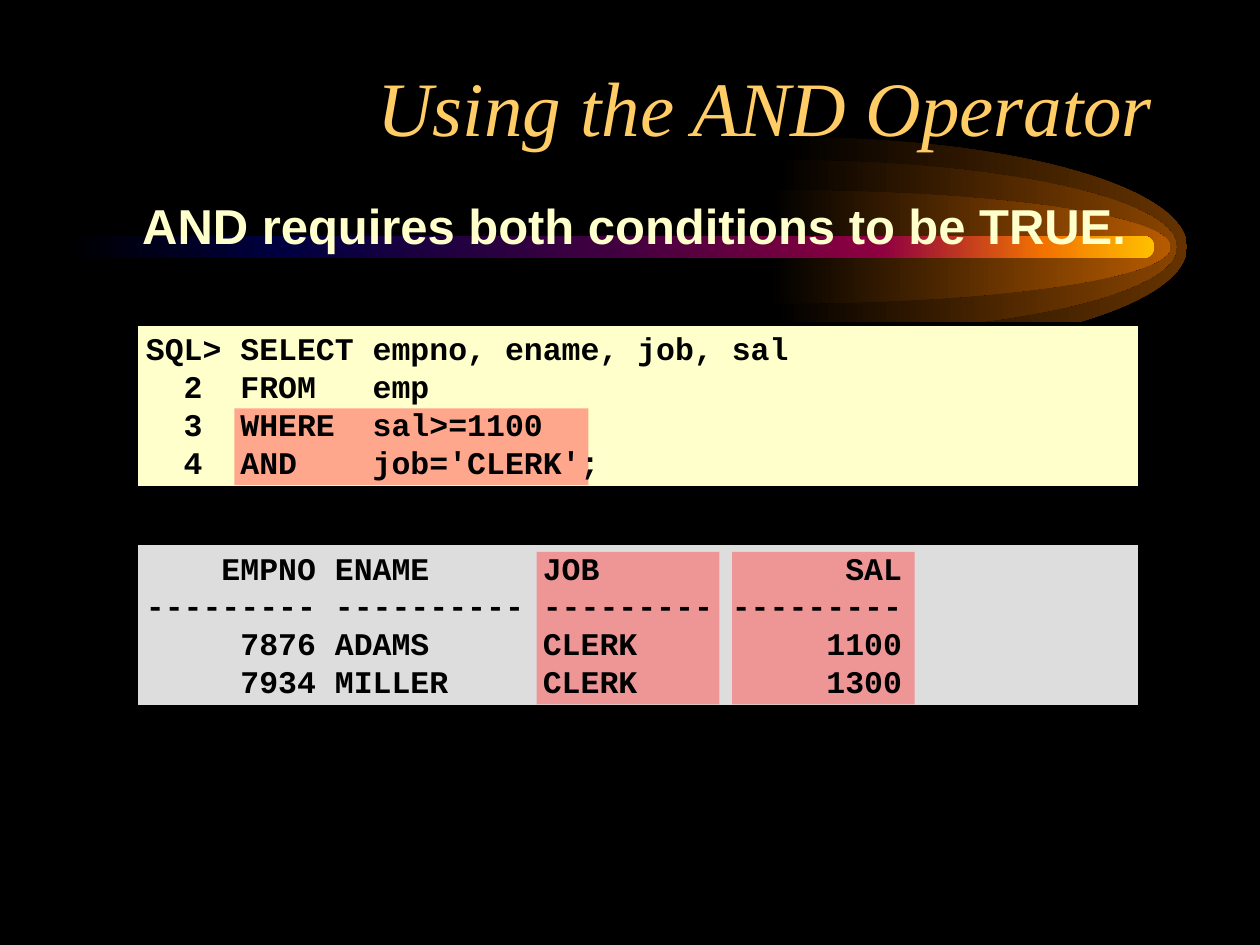
from dataclasses import dataclass
from typing import Optional

from lxml import etree
from pptx import Presentation
from pptx.dml.color import RGBColor
from pptx.enum import shapes, text
from pptx.oxml import ns
from pptx.util import Inches, Pt


@dataclass
class Glow:
    center_x: float
    radius_y: float
    color: str


@dataclass
class Box:
    left: float
    top: float
    width: float
    height: float


@dataclass
class Listing:
    top: float
    color: str
    lines: list[str]


@dataclass
class Style:
    font: str
    size: int
    color: str
    bold: bool = False
    italic: bool = False


GLOW_RADIUS_X, GLOW_TAIL, BEAM_Y = 3.13, 0.05, 1.96
QUARTER_ARC = 0.55
PANEL_LEFT, PANEL_WIDTH, PANEL_HEIGHT = 1.08, 7.97, 1.3
TEXT_MARGIN = 0.02

GLOWS = [
    Glow(6.29, 0.87, "663300"),
    Glow(6.21, 0.69, "894400"),
    Glow(6.16, 0.45, "B75B00"),
]
BEAM_STOPS = [(0, "000000"), (20, "000040"), (50, "400040"),
              (75, "8F0040"), (90, "F27300"), (100, "FFBF00")]
LISTINGS = [
    Listing(2.57, "FFFFCC", [
        "SQL> SELECT empno, ename, job, sal",
        "  2  FROM   emp",
        "  3  WHERE  sal>=1100",
        "  4  AND    job='CLERK';",
    ]),
    Listing(4.31, "DDDDDD", [
        "    EMPNO ENAME      JOB             SAL",
        "--------- ---------- --------- ---------",
        "     7876 ADAMS      CLERK          1100",
        "     7934 MILLER     CLERK          1300",
    ]),
]
HIGHLIGHTS = [Box(1.86, 3.24, 2.81, 0.61)] + [
    Box(left, 4.38, 1.45, 1.21) for left in (4.26, 5.81)]

TITLE = Style("Times New Roman", 44, "FFCC66", italic=True)
STATEMENT = Style("Arial", 28, "FFFFCC", bold=True)
CODE = Style("Courier New", 18, "000000", bold=True)


def rgb(color: str) -> RGBColor:
    return RGBColor.from_string(color)


def fill_gradient(shape, stops: list[tuple[int, str]]) -> None:
    """Fill from left to right with stops given as (percent, colour)."""
    shape.fill.gradient()
    shape.fill.gradient_angle = 0
    stop_list = next(shape._element.spPr.iter(ns.qn("a:gsLst")))
    stop_list.clear()
    for percent, color in stops:
        stop = etree.SubElement(stop_list, ns.qn("a:gs"), pos=str(percent * 1000))
        etree.SubElement(stop, ns.qn("a:srgbClr"), val=color)
    shape.line.fill.background()
    shape.shadow.inherit = False


def curve_segment(segment, controls: list[tuple[float, float]]) -> None:
    """Turn a straight freeform segment into a cubic curve."""
    segment.tag = ns.qn("a:cubicBezTo")
    for index, (x, y) in enumerate(controls):
        point = etree.Element(ns.qn("a:pt"), x=str(round(x)), y=str(round(y)))
        segment.insert(index, point)


def draw_glow(slide, glow: Glow) -> None:
    """Draw the right half of an ellipse from two quarter arcs."""
    center, tail = Inches(glow.center_x), Inches(GLOW_TAIL)
    radius_x, radius_y = Inches(GLOW_RADIUS_X), Inches(glow.radius_y)
    middle = Inches(BEAM_Y)
    builder = slide.shapes.build_freeform(center, middle - radius_y)
    builder.add_line_segments([
        (center + radius_x, middle),
        (center, middle + radius_y),
        (center - tail, middle + radius_y),
        (center, middle),
    ], close=True)
    half = builder.convert_to_shape()
    upper, lower = list(half._element.spPr.iter(ns.qn("a:lnTo")))[:2]
    reach_x, reach_y = QUARTER_ARC * radius_x, QUARTER_ARC * radius_y
    right, bottom = tail + radius_x, 2 * radius_y
    curve_segment(upper, [(tail + reach_x, 0), (right, radius_y - reach_y)])
    curve_segment(lower, [(right, radius_y + reach_y), (tail + reach_x, bottom)])
    fill_gradient(half, [(0, "000000"), (100, glow.color)])


def add_box(slide, box: Box, kind=shapes.MSO_SHAPE.RECTANGLE):
    return slide.shapes.add_shape(kind, Inches(box.left), Inches(box.top),
                                  Inches(box.width), Inches(box.height))


def draw_rectangle(slide, box: Box, color: str):
    rectangle = add_box(slide, box)
    rectangle.fill.solid()
    rectangle.fill.fore_color.rgb = rgb(color)
    rectangle.shadow.inherit = False
    return rectangle


def draw_panel(slide, listing: Listing) -> None:
    panel = draw_rectangle(
        slide, Box(PANEL_LEFT, listing.top, PANEL_WIDTH, PANEL_HEIGHT), listing.color)
    panel.line.color.rgb = rgb("000000")
    panel.line.width = Pt(2)


def draw_highlight(slide, box: Box) -> None:
    highlight = draw_rectangle(slide, box, "FF5050")
    highlight.line.fill.background()
    color = next(highlight._element.spPr.iter(ns.qn("a:srgbClr")))
    etree.SubElement(color, ns.qn("a:alpha"), val="50000")


def write(slide, box: Box, lines: list[str], style: Style,
          align=text.PP_ALIGN.LEFT, anchor=text.MSO_ANCHOR.TOP,
          wrap: bool = False, spacing: Optional[float] = None) -> None:
    frame = slide.shapes.add_textbox(Inches(box.left), Inches(box.top),
                                     Inches(box.width), Inches(box.height)).text_frame
    frame.word_wrap = wrap
    frame.vertical_anchor = anchor
    for index, line in enumerate(lines):
        paragraph = frame.add_paragraph() if index else frame.paragraphs[0]
        paragraph.alignment = align
        paragraph.line_spacing = spacing
        run = paragraph.add_run()
        run.text = line
        run.font.name = style.font
        run.font.size = Pt(style.size)
        run.font.bold = style.bold
        run.font.italic = style.italic
        run.font.color.rgb = rgb(style.color)


def main() -> None:
    deck = Presentation()
    deck.slide_width, deck.slide_height = Inches(10), Inches(7.5)
    slide = deck.slides.add_slide(deck.slide_layouts[6])
    slide.background.fill.solid()
    slide.background.fill.fore_color.rgb = rgb("000000")

    for glow in GLOWS:
        draw_glow(slide, glow)
    beam = add_box(slide, Box(0.5, 1.87, 8.66, 0.18),
                   shapes.MSO_SHAPE.ROUNDED_RECTANGLE)
    beam.adjustments[0] = 0.5
    fill_gradient(beam, BEAM_STOPS)

    for listing in LISTINGS:
        draw_panel(slide, listing)
    write(slide, Box(0.75, 0.42, 8.5, 1.25), ["Using the AND Operator"], TITLE,
          align=text.PP_ALIGN.RIGHT, wrap=True)
    write(slide, Box(1.03, 1.54, 8.02, 0.55),
          ["AND requires both conditions to be TRUE."], STATEMENT, spacing=0.95)
    for highlight in HIGHLIGHTS:
        draw_highlight(slide, highlight)
    for listing in LISTINGS:
        write(slide, Box(PANEL_LEFT - TEXT_MARGIN, listing.top - TEXT_MARGIN,
                         8, PANEL_HEIGHT + 0.03),
              listing.lines, CODE, anchor=text.MSO_ANCHOR.MIDDLE)

    deck.save("out.pptx")


if __name__ == "__main__":
    main()
